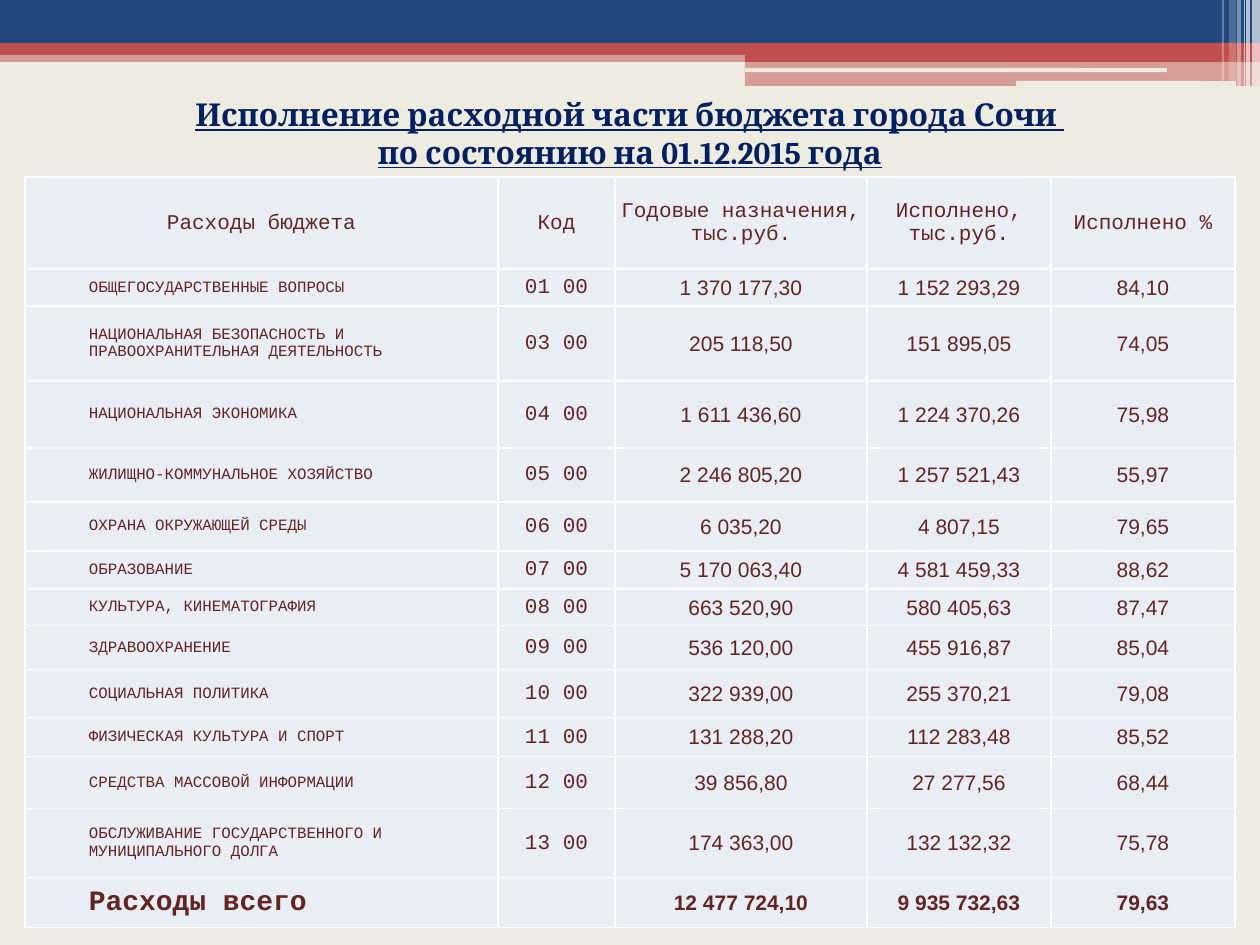
from lxml.etree import SubElement
from pptx import Presentation
from pptx.dml.color import RGBColor
from pptx.enum.shapes import MSO_SHAPE as Shape
from pptx.enum.text import MSO_ANCHOR as Anchor, PP_ALIGN as Align
from pptx.oxml.ns import qn
from pptx.util import Inches, Pt

SCALE = Inches(10) / 1260
COLORS = {
    "paper": "EEECE1", "navy": "1F497D", "red": "C0504D", "white": "FFFFFF",
    "title": "002060", "text": "632523", "cell": "E9EDF4",
}
BANDS = [
    (0, 50, 1260, 12, "red", 50),
    (0, 0, 1260, 43, "navy", 100),
    (0, 43, 1260, 12, "red", 100),
    (745, 49, 515, 13, "red", 100),
    (745, 61, 515, 25, "red", 50),
]
SLOTS = [(745, 68, 422, 4), (1016, 81, 220, 5)]
STRIPES = [
    (1252, 8, 86, 65), (1246, 4, 86, 65), (1244, 1, 86, 60),
    (1237, 4, 86, 40), (1229, 7, 81, 20), (1222, 2, 81, 30),
]
TITLE = ["Исполнение расходной части бюджета города Сочи ", "по состоянию на 01.12.2015 года"]
COLUMN_WIDTHS = [473, 117, 252, 184, 184]
ROW_HEIGHTS = [92, 37, 75, 67, 54, 49, 38, 37, 44, 48, 39, 52, 69, 50]
HEADER = ["Расходы бюджета", "Код", "Годовые назначения, тыс.руб.", "Исполнено, тыс.руб.", "Исполнено %"]
EXPENSES = [
    ("ОБЩЕГОСУДАРСТВЕННЫЕ ВОПРОСЫ", "01 00", "1 370 177,30", "1 152 293,29", "84,10"),
    ("НАЦИОНАЛЬНАЯ БЕЗОПАСНОСТЬ И ПРАВООХРАНИТЕЛЬНАЯ ДЕЯТЕЛЬНОСТЬ",
     "03 00", "205 118,50", "151 895,05", "74,05"),
    ("НАЦИОНАЛЬНАЯ ЭКОНОМИКА", "04 00", "1 611 436,60", "1 224 370,26", "75,98"),
    ("ЖИЛИЩНО-КОММУНАЛЬНОЕ ХОЗЯЙСТВО", "05 00", "2 246 805,20", "1 257 521,43", "55,97"),
    ("ОХРАНА ОКРУЖАЮЩЕЙ СРЕДЫ", "06 00", "6 035,20", "4 807,15", "79,65"),
    ("ОБРАЗОВАНИЕ", "07 00", "5 170 063,40", "4 581 459,33", "88,62"),
    ("КУЛЬТУРА, КИНЕМАТОГРАФИЯ", "08 00", "663 520,90", "580 405,63", "87,47"),
    ("ЗДРАВООХРАНЕНИЕ", "09 00", "536 120,00", "455 916,87", "85,04"),
    ("СОЦИАЛЬНАЯ ПОЛИТИКА", "10 00", "322 939,00", "255 370,21", "79,08"),
    ("ФИЗИЧЕСКАЯ КУЛЬТУРА И СПОРТ", "11 00", "131 288,20", "112 283,48", "85,52"),
    ("СРЕДСТВА МАССОВОЙ ИНФОРМАЦИИ", "12 00", "39 856,80", "27 277,56", "68,44"),
    ("ОБСЛУЖИВАНИЕ ГОСУДАРСТВЕННОГО И МУНИЦИПАЛЬНОГО ДОЛГА",
     "13 00", "174 363,00", "132 132,32", "75,78"),
]
TOTAL = ("Расходы всего", "", "12 477 724,10", "9 935 732,63", "79,63")


def px(length):
    return round(length * SCALE)


def rgb(name):
    return RGBColor.from_string(COLORS[name])


def add_span(para, text, font, size, color, bold=False, underline=None):
    span = para.add_run()
    span.text = text
    span.font.name = font
    span.font.size = Pt(size)
    span.font.bold = bold
    span.font.underline = underline
    span.font.color.rgb = rgb(color)


def add_block(page, kind, left, top, width, height, color, opacity=100):
    block = page.shapes.add_shape(kind, px(left), px(top), px(width), px(height))
    block.shadow.inherit = False
    block.line.fill.background()
    block.fill.solid()
    block.fill.fore_color.rgb = rgb(color)
    if opacity < 100:
        tint = block.fill._xPr.find(".//" + qn("a:srgbClr"))
        SubElement(tint, qn("a:alpha"), val=str(opacity * 1000))


def add_banner(page, left, top):
    for x, y, width, height, color, opacity in BANDS:
        add_block(page, Shape.RECTANGLE, left + x, top + y, width, height, color, opacity)
    for x, y, width, height in SLOTS:
        add_block(page, Shape.ROUNDED_RECTANGLE, left + x, top + y, width, height, "paper")
    for x, width, height, opacity in STRIPES:
        add_block(page, Shape.RECTANGLE, left + x, top, width, height, "white", opacity)


def add_title(page, left, top, width, height):
    box = page.shapes.add_textbox(px(left), px(top), px(width), px(height))
    frame = box.text_frame
    frame.word_wrap = True
    for index, line in enumerate(TITLE):
        para = frame.add_paragraph() if index else frame.paragraphs[0]
        para.alignment = Align.CENTER
        add_span(para, line, "Cambria", 18, "title", bold=True, underline=True)


def style_cell(cell):
    cell.vertical_anchor = Anchor.MIDDLE
    cell.margin_left = cell.margin_right = cell.margin_top = px(1)
    cell.margin_bottom = 0
    properties = cell._tc.get_or_add_tcPr()
    for side in ("lnL", "lnR", "lnT", "lnB"):
        border = SubElement(properties, qn("a:" + side), w=str(Pt(1)))
        fill = SubElement(border, qn("a:solidFill"))
        SubElement(fill, qn("a:srgbClr"), val=COLORS["white"])
    cell.fill.solid()
    cell.fill.fore_color.rgb = rgb("cell")


def fill_cell(cell, text, column, is_header, is_total):
    style_cell(cell)
    para = cell.text_frame.paragraphs[0]
    size, font = 12, "Courier New"
    if is_header or column:
        para.alignment = Align.CENTER
    else:
        para._p.get_or_add_pPr().set("marL", str(px(63)))
        size = 16 if is_total else 9
    if column > 1 and not is_header:
        font = "Arial"
    if text:
        add_span(para, text, font, size, "text", bold=is_total)


def add_budget_table(page, left, top):
    rows = [HEADER, *EXPENSES, TOTAL]
    frame = page.shapes.add_table(
        len(rows), len(HEADER), px(left), px(top), px(sum(COLUMN_WIDTHS)), px(sum(ROW_HEIGHTS)))
    table = frame.table
    table.horz_banding = False
    for column, width in zip(table.columns, COLUMN_WIDTHS):
        column.width = px(width)
    for index, (texts, height) in enumerate(zip(rows, ROW_HEIGHTS)):
        table.rows[index].height = px(height)
        for column, text in enumerate(texts):
            fill_cell(table.cell(index, column), text, column, texts is HEADER, texts is TOTAL)


def main():
    deck = Presentation()
    deck.slide_width, deck.slide_height = px(1260), px(945)
    page = deck.slides.add_slide(deck.slide_layouts[6])
    page.background.fill.solid()
    page.background.fill.fore_color.rgb = rgb("paper")
    add_banner(page, 0, 0)
    add_budget_table(page, 25, 177)
    add_title(page, 25, 89, 1210, 89)
    deck.save("out.pptx")


if __name__ == "__main__":
    main()
